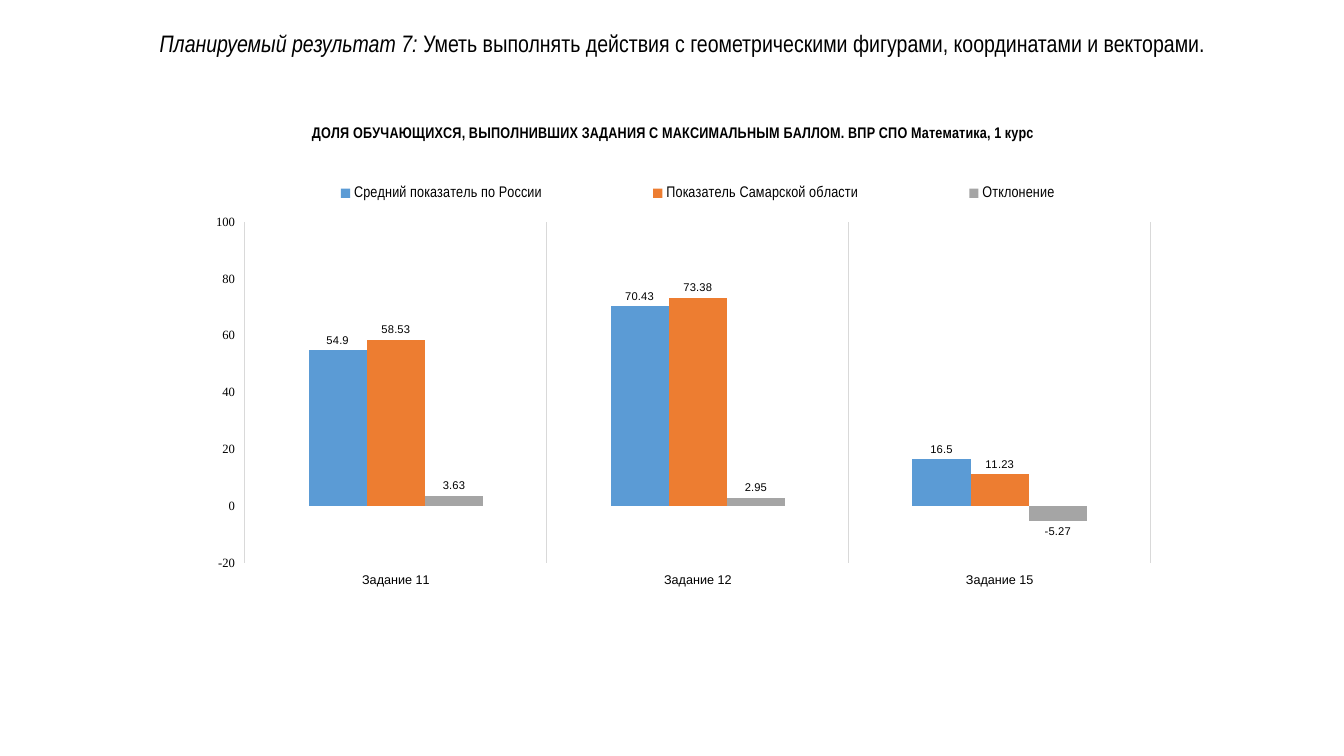
"""Builds the slide comparing regional and national shares for three mathematics tasks."""
import pptx
import pptx.chart.data
import pptx.dml.color
import pptx.enum.chart
import pptx.enum.text
import pptx.oxml
import pptx.oxml.ns
import pptx.util

THEME = {
    "text": "000000", "grid": "D9D9D9",
    "series": ["5B9BD5", "ED7D31", "A5A5A5"],
    "narrow": "Arial Narrow", "sans": "Arial", "serif": "Times New Roman",
    "heading": 17, "caption": 11, "base": 10, "axis": 9, "label": 8,
}
TASKS = ["Задание 11", "Задание 12", "Задание 15"]
RESULTS = {
    "Средний показатель по России": [54.9, 70.43, 16.5],
    "Показатель Самарской области": [58.53, 73.38, 11.23],
    "Отклонение": [3.63, 2.95, -5.27],
}


def style(font, face, size, bold=False, italic=False):
    font.name, font.size = THEME[face], pptx.util.Pt(THEME[size])
    font.bold, font.italic = bold, italic
    font.color.rgb = pptx.dml.color.RGBColor.from_string(THEME["text"])


def set_layout(parent, left, top, width, height, inner=False):
    namespace = pptx.oxml.ns.nsdecls("c")
    target = '<c:layoutTarget val="inner"/>' if inner else ""
    layout = pptx.oxml.parse_xml(
        f'<c:layout {namespace}><c:manualLayout>{target}'
        '<c:xMode val="edge"/><c:yMode val="edge"/>'
        f'<c:x val="{left}"/><c:y val="{top}"/><c:w val="{width}"/><c:h val="{height}"/>'
        '</c:manualLayout></c:layout>')
    for old in parent.findall(pptx.oxml.ns.qn("c:layout")):
        parent.remove(old)
    position = parent.find(pptx.oxml.ns.qn("c:legendPos"))
    if position is None:
        parent.insert(0, layout)
    else:
        position.addnext(layout)


presentation = pptx.Presentation()
presentation.slide_width = pptx.util.Inches(13.33)
presentation.slide_height = pptx.util.Inches(7.5)
slide = presentation.slides.add_slide(presentation.slide_layouts[5])

title = slide.shapes.title
title.left, title.top = pptx.util.Inches(1.4), pptx.util.Inches(0.23)
title.width, title.height = pptx.util.Inches(10.74), pptx.util.Inches(0.39)
frame = title.text_frame
frame.word_wrap = True
frame.auto_size = pptx.enum.text.MSO_AUTO_SIZE.NONE
frame.vertical_anchor = pptx.enum.text.MSO_ANCHOR.MIDDLE
frame.margin_left = frame.margin_right = 0
paragraph = frame.paragraphs[0]
paragraph.alignment = pptx.enum.text.PP_ALIGN.CENTER
for text, italic in [
    ("Планируемый результат 7: ", True),
    ("Уметь выполнять действия с геометрическими фигурами, координатами и векторами.", False),
]:
    run = paragraph.add_run()
    run.text = text
    style(run.font, "narrow", "heading", italic=italic)

data = pptx.chart.data.CategoryChartData()
data.categories = TASKS
for name, values in RESULTS.items():
    data.add_series(name, values)
chart = slide.shapes.add_chart(
    pptx.enum.chart.XL_CHART_TYPE.COLUMN_CLUSTERED,
    pptx.util.Inches(1.85), pptx.util.Inches(1.06),
    pptx.util.Inches(9.66), pptx.util.Inches(5.2), data).chart
style(chart.font, "serif", "base")

chart.has_title = True
run = chart.chart_title.text_frame.paragraphs[0].add_run()
run.text = ("ДОЛЯ ОБУЧАЮЩИХСЯ, ВЫПОЛНИВШИХ ЗАДАНИЯ С МАКСИМАЛЬНЫМ БАЛЛОМ. "
            "ВПР СПО Математика, 1 курс")
style(run.font, "narrow", "caption", bold=True)
chart.chart_title.include_in_layout = False

chart.has_legend = True
chart.legend.position = pptx.enum.chart.XL_LEGEND_POSITION.TOP
chart.legend.include_in_layout = False
style(chart.legend.font, "narrow", "caption")
set_layout(chart.legend._element, 0.05, 0.13, 0.95, 0.07)
set_layout(chart._chartSpace.chart.plotArea, 0.06, 0.22, 0.93, 0.65, inner=True)

for axis, face in [(chart.category_axis, "sans"), (chart.value_axis, "serif")]:
    style(axis.tick_labels.font, face, "axis")
    axis.format.line.fill.background()
chart.category_axis.tick_label_position = pptx.enum.chart.XL_TICK_LABEL_POSITION.LOW
chart.category_axis.has_major_gridlines = True
gridline = chart.category_axis.major_gridlines.format.line
gridline.color.rgb = pptx.dml.color.RGBColor.from_string(THEME["grid"])
gridline.width = pptx.util.Pt(0.75)
chart.value_axis.has_major_gridlines = False
chart.value_axis.minimum_scale, chart.value_axis.maximum_scale = -20, 100
chart.value_axis.major_unit = 20

plot = chart.plots[0]
plot.gap_width, plot.overlap, plot.vary_by_categories = 219, 0, False
for series, color in zip(plot.series, THEME["series"]):
    series.invert_if_negative = False
    series.format.fill.solid()
    series.format.fill.fore_color.rgb = pptx.dml.color.RGBColor.from_string(color)
    labels = series.data_labels
    labels.show_value = True
    labels.position = pptx.enum.chart.XL_LABEL_POSITION.OUTSIDE_END
    style(labels.font, "sans", "label")

presentation.save("out.pptx")
